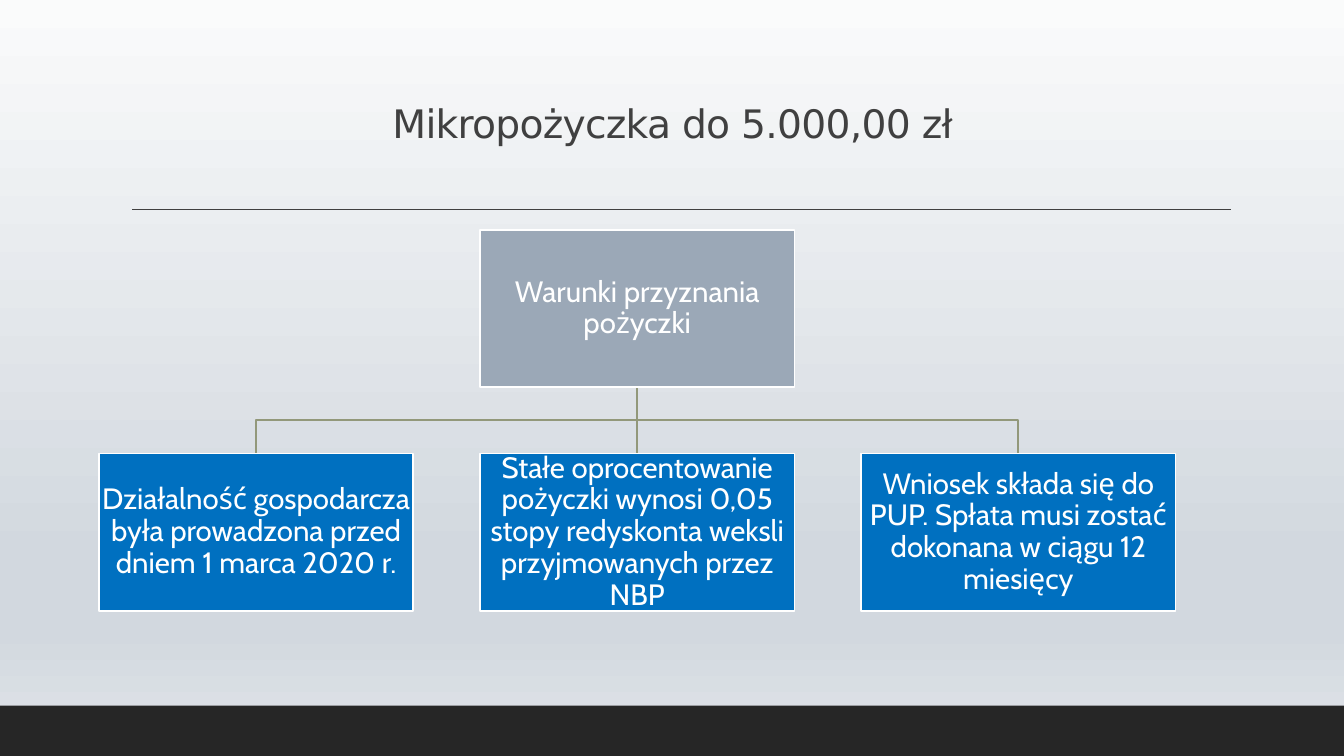
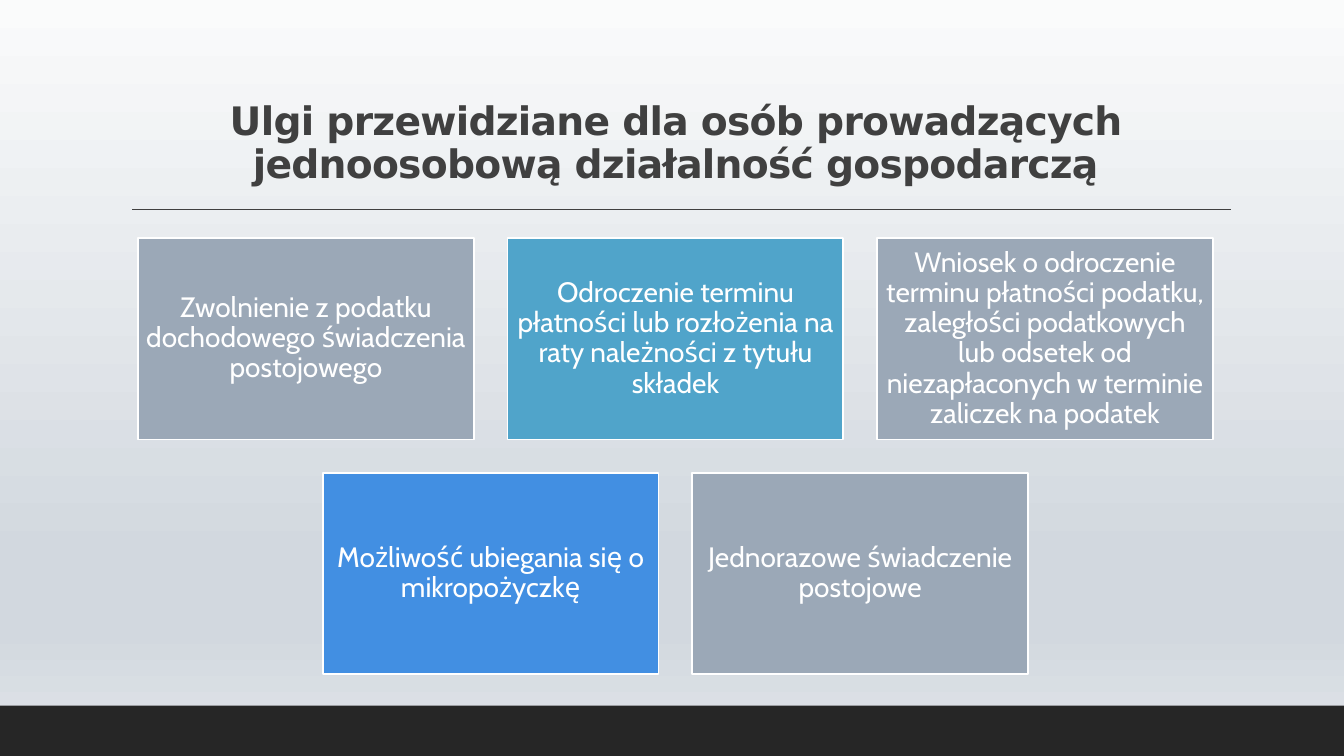
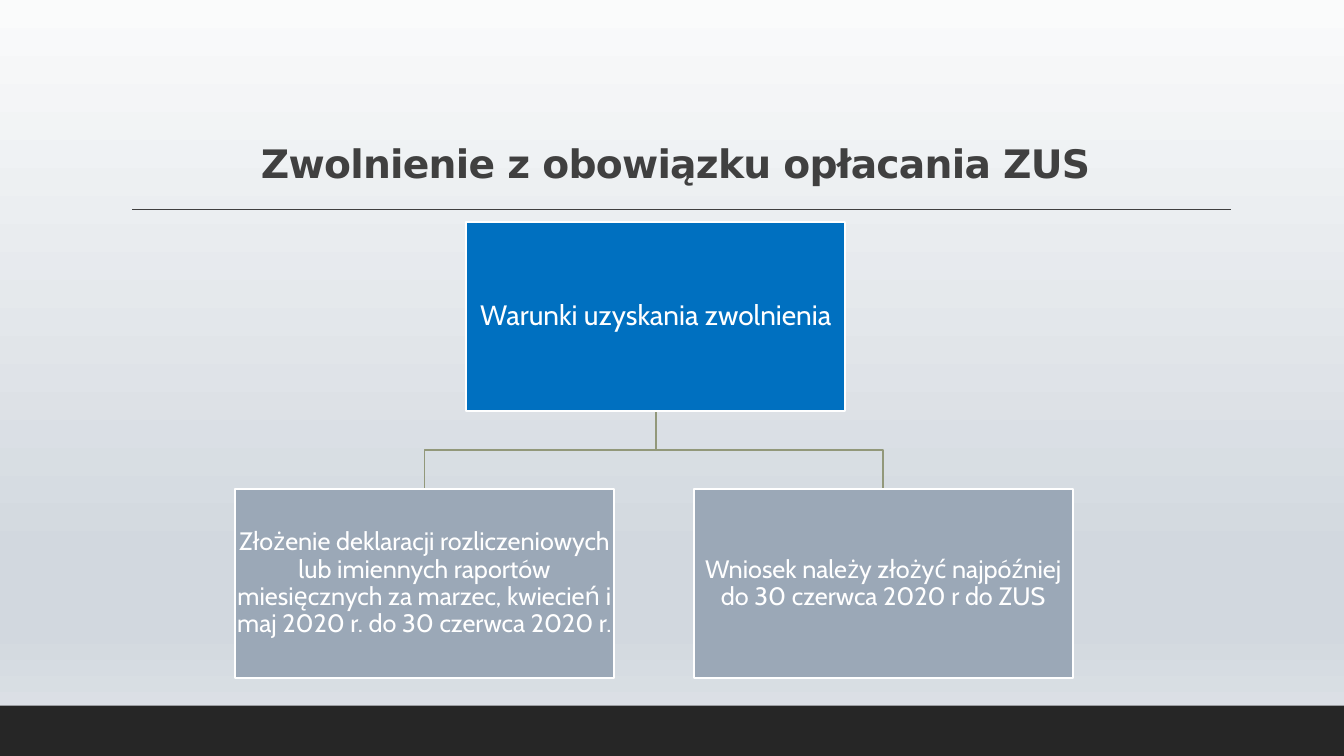
import pptx
import pptx.util
import pptx.dml.color
import pptx.enum.shapes
import pptx.enum.text
import pptx.oxml.ns
import lxml.etree

Inches = pptx.util.Inches
Pt = pptx.util.Pt
qn = pptx.oxml.ns.qn
RECT = pptx.enum.shapes.MSO_SHAPE.RECTANGLE
LINE = pptx.enum.shapes.MSO_CONNECTOR.STRAIGHT
ANCHOR = pptx.enum.text.MSO_ANCHOR
CENTER = pptx.enum.text.PP_ALIGN.CENTER

INK = {
    "band": "262626", "dark": "404040", "white": "FFFFFF", "link": "92987A",
    "gray": "9BA8B7", "blue": "0070C0", "teal": "50A4CA", "sky": "428FE2",
}
STOPS = [(0, "FAFBFB"), (74, "D2D8DF"), (83, "D2D8DF"), (100, "E1E5E9")]
HEAD = {"name": "DejaVu Sans", "size": Pt(28)}
BODY = {"name": "Cabin", "bold": False}
WIDE, HIGH = 13.33, 7.5


def tint(ink):
    return pptx.dml.color.RGBColor.from_string(INK[ink])


def setall(item, vals):
    for key, val in vals.items():
        setattr(item, key, val)


def stroke(line, ink, width):
    line.color.rgb = tint(ink)
    line.width = Pt(width)


def paint(shape, ink):
    shape.shadow.inherit = False
    shape.fill.solid()
    shape.fill.fore_color.rgb = tint(ink)


def write(shape, text, ink, font, anchor, inset=None):
    """Fill a shape with one centred paragraph and return its run."""
    frame = shape.text_frame
    setall(frame, {"word_wrap": True, "vertical_anchor": anchor})
    if inset is not None:
        sides = ("left", "top", "right", "bottom")
        setall(frame, {f"margin_{side}": Inches(inset) for side in sides})
    para = frame.paragraphs[0]
    setall(para, {"alignment": CENTER, "line_spacing": 0.9})
    run = para.add_run()
    run.text = text
    setall(run.font, font)
    run.font.color.rgb = tint(ink)
    return run


def rule(slide, start, end, ink, width):
    """Draw a straight line between two points."""
    ends = [Inches(val) for val in (*start, *end)]
    line = slide.shapes.add_connector(LINE, *ends)
    stroke(line.line, ink, width)
    props = line._element.spPr
    lxml.etree.SubElement(props, qn("a:effectLst"))


def shade(slide):
    """Run the background gradient from top to bottom."""
    fill = slide.background.fill
    fill.gradient()
    fill.gradient_angle = 270
    stops = next(slide.element.iter(qn("a:gsLst")))
    for old in list(stops):
        stops.remove(old)
    for spot, code in STOPS:
        stop = lxml.etree.SubElement(stops, qn("a:gs"), pos=str(spot * 1000))
        lxml.etree.SubElement(stop, qn("a:srgbClr"), val=code)


def base(deck, title, box, bold):
    """Add a slide with background, band, rule and title."""
    slide = deck.slides.add_slide(deck.slide_layouts[6])
    shade(slide)
    band = slide.shapes.add_shape(
        RECT, 0, Inches(7), Inches(WIDE), Inches(0.5))
    paint(band, "band")
    band.line.fill.background()
    rule(slide, (1.31, 2.08), (12.21, 2.08), "dark", 1)
    head = slide.shapes.add_textbox(*map(Inches, box))
    run = write(head, title, "dark", {**HEAD, "bold": bold}, ANCHOR.BOTTOM)
    run.font._element.set("spc", "-50")
    return slide


def card(slide, box, text, ink, size, inset):
    shape = slide.shapes.add_shape(RECT, *map(Inches, box))
    paint(shape, ink)
    stroke(shape.line, "white", 1.25)
    font = {**BODY, "size": Pt(size)}
    write(shape, text, "white", font, ANCHOR.MIDDLE, inset)


def link(slide, start, end):
    """Join a parent to a child, with an elbow halfway down."""
    if abs(start[0] - end[0]) < 0.01:
        rule(slide, start, end, "link", 1.25)
        return
    half = (start[1] + end[1]) / 2
    spots = [start, (start[0], half), (end[0], half), end]
    first, *rest = [(Inches(x), Inches(y)) for x, y in spots]
    build = slide.shapes.build_freeform(*first)
    build.add_line_segments(rest, close=False)
    shape = build.convert_to_shape()
    shape.shadow.inherit = False
    shape.fill.background()
    stroke(shape.line, "link", 1.25)


def tree(slide, area, cell, root, kids, shift=0):
    """Place a root card over an even row of child cards in the area."""
    left, top, width, height = area
    wide, high = cell
    step = (width - wide) / (len(kids["texts"]) - 1)
    mid = left + width / 2 + shift
    low = top + height - high
    spots = [left + i * step for i in range(len(kids["texts"]))]
    for x in spots:
        link(slide, (mid, top + high), (x + wide / 2, low))
    card(slide, (mid - wide / 2, top, wide, high), inset=0.01, **root)
    for x, text in zip(spots, kids["texts"]):
        card(slide, (x, low, wide, high), text, kids["ink"], kids["size"], 0.01)


def grid(slide, area, cell, rows):
    """Place rows of cards, each row centred in the area."""
    left, top, width, height = area
    wide, high = cell
    step = (width - wide) / (max(map(len, rows)) - 1)
    drop = (height - high) / (len(rows) - 1)
    for i, row in enumerate(rows):
        start = left + (width - wide - step * (len(row) - 1)) / 2
        for j, (text, ink) in enumerate(row):
            box = (start + j * step, top + i * drop, wide, high)
            card(slide, box, text, ink, 20, 0.08)


def loan(deck):
    slide = base(deck, "Mikropożyczka do 5.000,00 zł",
                 (1.17, 0.97, 11, 0.54), False)
    root = {"text": "Warunki przyznania pożyczki", "ink": "gray", "size": 21}
    kids = {"ink": "blue", "size": 21, "texts": [
        "Działalność gospodarcza była prowadzona przed dniem 1 marca 2020 r.",
        "Stałe oprocentowanie pożyczki wynosi 0,05 stopy redyskonta weksli "
        "przyjmowanych przez NBP",
        "Wniosek składa się do PUP. Spłata musi zostać dokonana w ciągu "
        "12 miesięcy",
    ]}
    tree(slide, (0.98, 2.28, 10.68, 3.78), (3.12, 1.56), root, kids)


def relief(deck):
    slide = base(deck, "Ulgi przewidziane dla osób prowadzących "
                 "jednoosobową działalność gospodarczą",
                 (1.2, 0.31, 11, 1.59), True)
    rows = [
        [("Zwolnienie z podatku dochodowego świadczenia postojowego", "gray"),
         ("Odroczenie terminu płatności lub rozłożenia na raty należności "
          "z tytułu składek", "teal"),
         ("Wniosek o odroczenie terminu płatności podatku, zaległości "
          "podatkowych lub odsetek od niezapłaconych w terminie zaliczek "
          "na podatek", "gray")],
        [("Możliwość ubiegania się o mikropożyczkę", "sky"),
         ("Jednorazowe świadczenie postojowe", "gray")],
    ]
    grid(slide, (1.37, 2.36, 10.66, 4.33), (3.33, 2), rows)


def waiver(deck):
    slide = base(deck, "Zwolnienie z obowiązku opłacania ZUS",
                 (1.2, 0.31, 11, 1.59), True)
    root = {"text": "Warunki uzyskania zwolnienia", "ink": "blue", "size": 20}
    kids = {"ink": "gray", "size": 18, "texts": [
        "Złożenie deklaracji rozliczeniowych lub imiennych raportów "
        "miesięcznych za marzec, kwiecień i maj 2020 r. do 30 czerwca 2020 r.",
        "Wniosek należy złożyć najpóźniej do 30 czerwca 2020 r do ZUS",
    ]}
    tree(slide, (2.33, 2.2, 8.31, 4.53), (3.76, 1.88), root, kids, 0.02)


def main():
    deck = pptx.Presentation()
    setall(deck, {"slide_width": Inches(WIDE), "slide_height": Inches(HIGH)})
    for make in (loan, relief, waiver):
        make(deck)
    deck.save("out.pptx")


if __name__ == "__main__":
    main()
